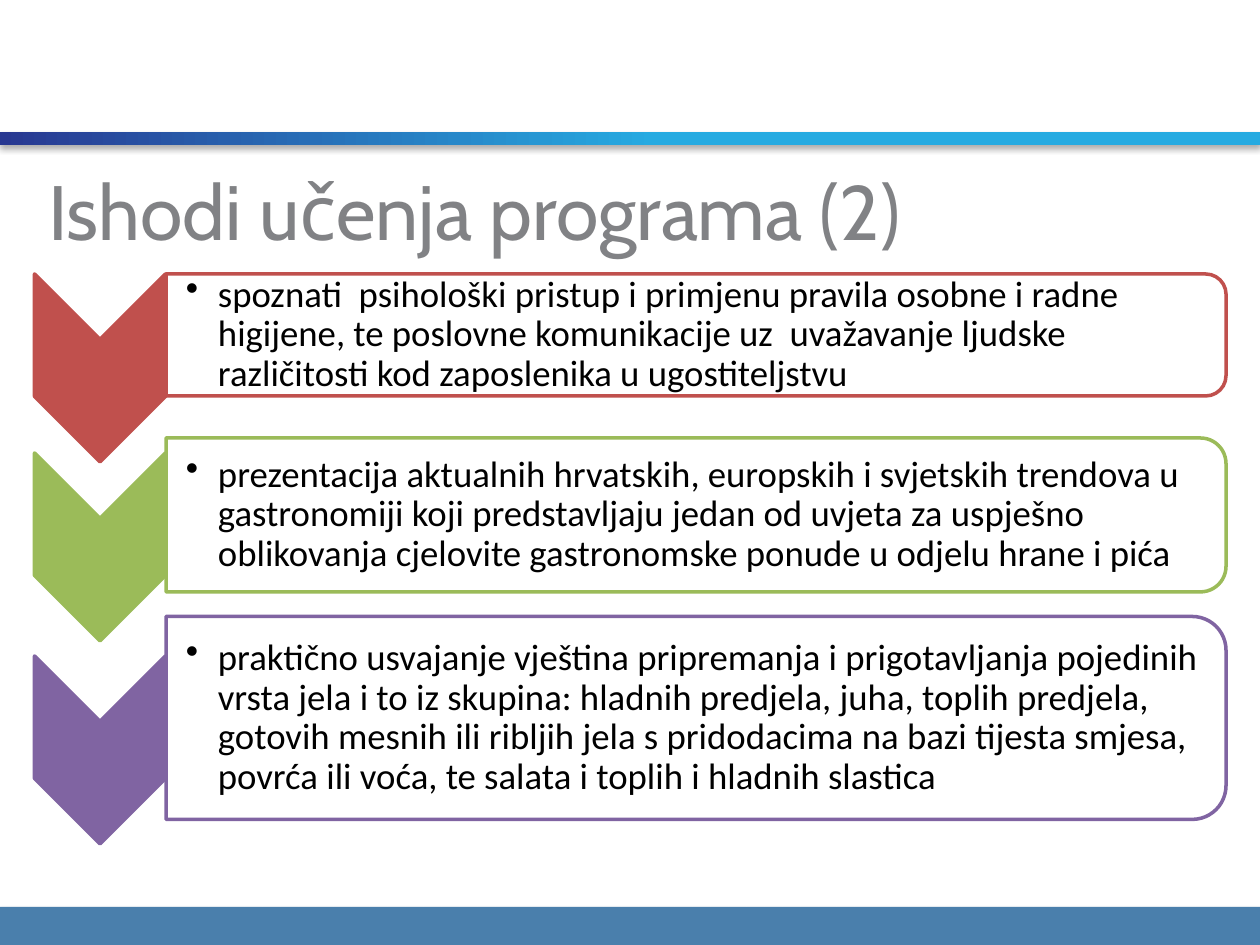
from dataclasses import dataclass

from pptx import Presentation
from pptx.dml.color import RGBColor
from pptx.enum.shapes import MSO_SHAPE as Shape
from pptx.enum.text import MSO_ANCHOR as Anchor, MSO_AUTO_SIZE as Fit, PP_ALIGN as Align
from pptx.oxml.ns import qn
from pptx.util import Emu, Pt
from lxml.etree import SubElement

PX = 914400 / 126
WIDE, HIGH = 1260, 945
HEX = {
    "title": "818285", "text": "000000", "panel": "FFFFFF",
    "foot": "4A7FAC", "navy": "283891", "sky": "25AAE1",
    "red": "C0504D", "green": "9BBB59", "violet": "8064A2",
}
LEFT, SPAN = 166, 1060          # panels
MID, LONG, BROAD = 100, 188, 131  # chevrons, before turning
INDENT = 32


@dataclass
class Row:
    color: str
    tip: int   # middle of the chevron
    mid: int   # middle of the panel
    high: int
    text: str


ROWS = [
    Row("red", 368, 335, 122,
        "spoznati  psihološki pristup i primjenu pravila osobne i radne higijene, "
        "te poslovne komunikacije uz  uvažavanje ljudske različitosti kod "
        "zaposlenika u ugostiteljstvu"),
    Row("green", 547, 515, 154,
        "prezentacija aktualnih hrvatskih, europskih i svjetskih trendova u "
        "gastronomiji koji predstavljaju jedan od uvjeta za uspješno oblikovanja "
        "cjelovite gastronomske ponude u odjelu hrane i pića"),
    Row("violet", 750, 718, 203,
        "praktično usvajanje vještina pripremanja i prigotavljanja pojedinih vrsta "
        "jela i to iz skupina: hladnih predjela, juha, toplih predjela, gotovih "
        "mesnih ili ribljih jela s pridodacima na bazi tijesta smjesa, povrća ili "
        "voća, te salata i toplih i hladnih slastica"),
]


def px(n: float) -> Emu:
    return Emu(round(n * PX))


def rgb(name: str) -> RGBColor:
    return RGBColor.from_string(HEX[name])


def write(box, text: str, *, font: str, size: int, color: str,
          space: float = 1.0, bullet: bool = False,
          inset: tuple[int, int, int, int] = (13, 6, 13, 6)) -> None:
    frame = box.text_frame
    frame.word_wrap = True
    frame.auto_size = Fit.NONE
    frame.vertical_anchor = Anchor.MIDDLE
    (frame.margin_left, frame.margin_top,
     frame.margin_right, frame.margin_bottom) = map(px, inset)
    frame.text = text
    para = frame.paragraphs[0]
    para.alignment = Align.LEFT
    para.line_spacing = space
    if bullet:
        props = para._p.get_or_add_pPr()
        props.set("marL", str(px(INDENT)))
        props.set("indent", str(-px(INDENT)))
        SubElement(props, qn("a:buChar"), char="•")
    face = para.runs[0].font
    face.name, face.size = font, Pt(size)
    face.color.rgb = rgb(color)


def turned(slide, kind, x: float, y: float, wide: int, high: int,
           fill: str, line: str):
    """Add a shape centred on x, y and turned a quarter to the right."""
    shape = slide.shapes.add_shape(
        kind, px(x - wide / 2), px(y - high / 2), px(wide), px(high))
    shape.rotation = 90
    shape.shadow.inherit = False
    shape.fill.solid()
    shape.fill.fore_color.rgb = rgb(fill)
    shape.line.color.rgb = rgb(line)
    shape.line.width = Pt(2)
    return shape


def bar(slide, top: int, high: int, *colors: str) -> None:
    """Add a full-width band with a soft shadow; two colours make a gradient."""
    shape = slide.shapes.add_shape(Shape.RECTANGLE, 0, px(top), px(WIDE), px(high))
    shape.line.fill.background()
    if len(colors) == 1:
        shape.fill.solid()
        shape.fill.fore_color.rgb = rgb(colors[0])
    else:
        shape.fill.gradient()
        shape.fill.gradient_angle = 0
        for stop, spot, color in zip(shape.fill.gradient_stops, (0, 0.52), colors):
            stop.position = spot
            stop.color.rgb = rgb(color)
    shape.shadow.inherit = False
    glow = SubElement(
        shape._element.spPr.find(qn("a:effectLst")), qn("a:outerShdw"),
        blurRad=str(Pt(3.5)), dist=str(Pt(2.2)), dir="5400000", rotWithShape="0")
    tint = SubElement(glow, qn("a:srgbClr"), val=HEX["text"])
    SubElement(tint, qn("a:alpha"), val="32000")


def draw(slide, row: Row) -> None:
    turned(slide, Shape.CHEVRON, MID, row.tip, LONG, BROAD, row.color, row.color)
    panel = turned(slide, Shape.ROUND_2_SAME_RECTANGLE, LEFT + SPAN / 2, row.mid,
                   row.high, SPAN, "panel", row.color)
    tint = panel._element.spPr.find(qn("a:solidFill"))[0]
    SubElement(tint, qn("a:alpha"), val="90000")
    tall = row.high * 0.9
    box = slide.shapes.add_textbox(
        px(LEFT), px(row.mid - tall / 2), px(SPAN - row.high * 0.05), px(tall))
    write(box, row.text, font="Calibri", size=21, color="text",
          space=0.9, bullet=True, inset=(20, 1, 1, 1))


def main() -> None:
    deck = Presentation()
    deck.slide_width, deck.slide_height = px(WIDE), px(HIGH)
    slide = deck.slides.add_slide(deck.slide_layouts[5])
    bar(slide, 907, 38, "foot")
    bar(slide, 132, 13, "navy", "sky")
    title = slide.shapes.title
    title.left, title.top, title.width, title.height = map(px, (35, 155, 1190, 110))
    write(title, "Ishodi učenja programa (2)", font="Cabin", size=44, color="title")
    for row in ROWS:
        draw(slide, row)
    deck.save("out.pptx")


if __name__ == "__main__":
    main()
